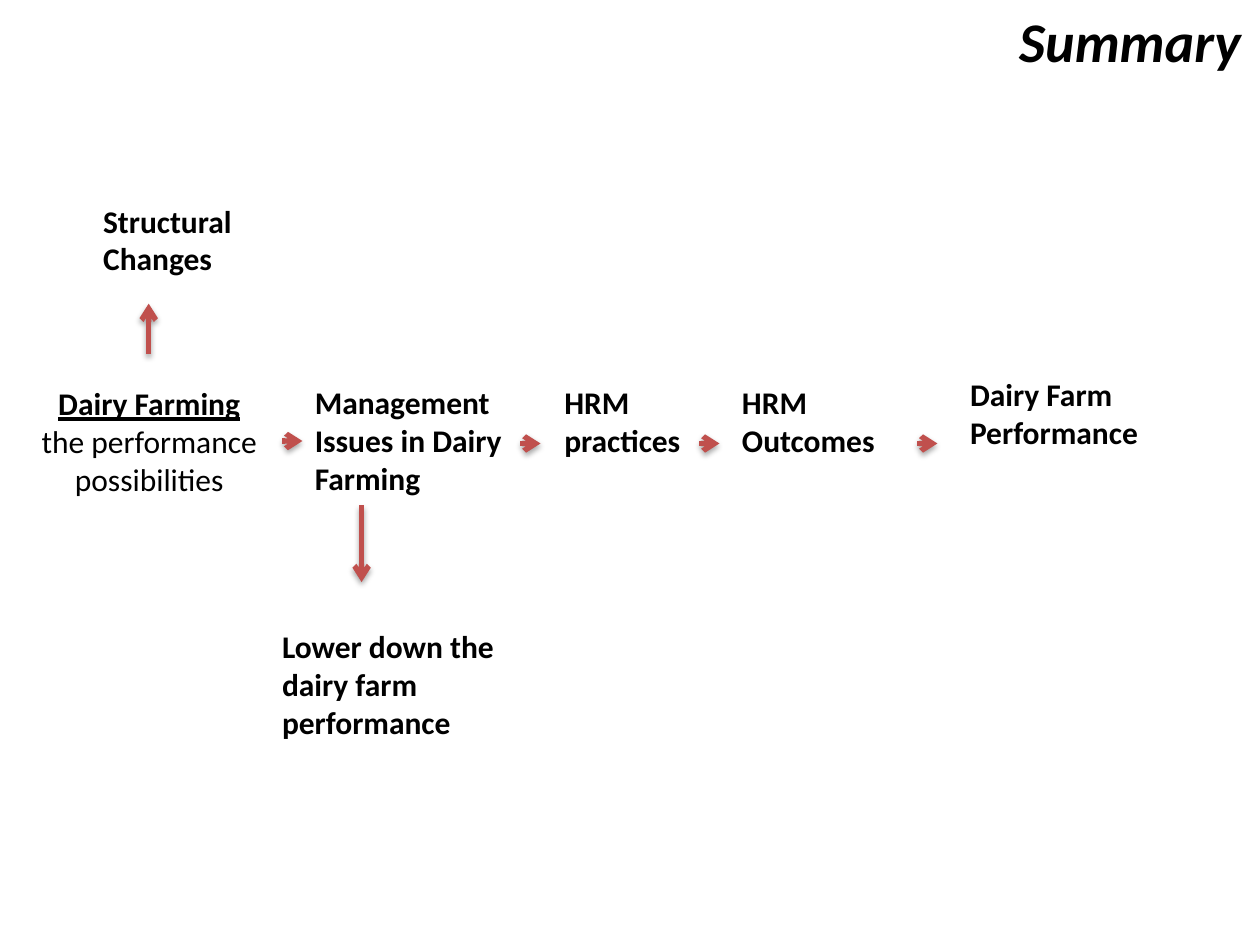
import pptx
import pptx.dml.color
import pptx.enum.shapes
import pptx.enum.text
import pptx.oxml
import pptx.oxml.ns
import pptx.util
from dataclasses import dataclass

ALIGN = pptx.enum.text.PP_ALIGN
COLS, ROWS = 100, 75  # grid of square cells over the slide


@dataclass(frozen=True)
class Theme:
    font: str = "Calibri"
    ink: str = "000000"
    accent: str = "C0504D"
    body: int = 18
    title: int = 32
    line: int = 3


THEME = Theme()


def cell(count):
    """Length of a number of grid cells."""
    return pptx.util.Inches(count * 10 / COLS)


def color(code):
    return pptx.dml.color.RGBColor.from_string(code)


def add_text(slide, box, lines, size=THEME.body, align=ALIGN.LEFT):
    """Add a wrapped text box with one paragraph per line; return its fonts."""
    frame = slide.shapes.add_textbox(*map(cell, box)).text_frame
    frame.word_wrap = True
    frame.auto_size = pptx.enum.text.MSO_AUTO_SIZE.SHAPE_TO_FIT_TEXT
    frame.text = "\n".join(lines)
    for para in frame.paragraphs:
        para.alignment = align
        font = para.font
        font.name, font.size, font.bold = THEME.font, pptx.util.Pt(size), True
        font.color.rgb = color(THEME.ink)
    return [para.font for para in frame.paragraphs]


def add_arrow(slide, start, end):
    """Add a straight arrow with a soft shadow below it."""
    kind = pptx.enum.shapes.MSO_CONNECTOR.STRAIGHT
    arrow = slide.shapes.add_connector(kind, *map(cell, start + end))
    arrow.line.color.rgb = color(THEME.accent)
    arrow.line.width = pptx.util.Pt(THEME.line)
    space = pptx.oxml.ns.nsdecls("a")
    arrow.line._get_or_add_ln().append(
        pptx.oxml.parse_xml(f'<a:tailEnd {space} type="arrow"/>'))
    arrow._element.spPr.append(pptx.oxml.parse_xml(
        f'<a:effectLst {space}><a:outerShdw blurRad="40000" dist="23000" '
        f'dir="5400000" rotWithShape="0"><a:srgbClr val="{THEME.ink}">'
        '<a:alpha val="35000"/></a:srgbClr></a:outerShdw></a:effectLst>'))


def main():
    deck = pptx.Presentation()
    deck.slide_width, deck.slide_height = cell(COLS), cell(ROWS)
    slide = deck.slides.add_slide(deck.slide_layouts[6])

    # Starting point: bold underlined heading over plain text
    head, note = add_text(
        slide, (1.2, 30, 21.3, 10.1),
        ["Dairy Farming", "the performance possibilities"],
        align=ALIGN.CENTER)
    head.underline = True
    note.bold = False

    # Steps of the chain and its two side branches
    steps = [
        ("HRM practices", (43.8, 29.9, 14.1, 7.1)),
        ("HRM Outcomes", (57.9, 29.9, 16.5, 7.1)),
        ("Dairy Farm Performance", (76, 29.3, 21.8, 7.1)),
        ("Structural Changes", (7.2, 15.5, 18.1, 7.1)),
        ("Management Issues in Dairy Farming", (24, 29.9, 18.4, 10.1)),
        ("Lower down the dairy farm performance", (21.4, 49.3, 21, 10.1)),
    ]
    for words, box in steps:
        add_text(slide, box, [words])

    # Short arrows along the chain
    for left, row in [(22.4, 35), (41.3, 35.2), (55.5, 35.2), (72.8, 35.2)]:
        add_arrow(slide, (left, row), (left + 1.6, row))

    # Arrows up and down to the branches
    for col, top, tip in [(11.8, 28.1, 24.1), (28.7, 40.1, 46.2)]:
        add_arrow(slide, (col, top), (col, tip))

    # Title
    title, = add_text(slide, (79.9, 0, 20.1, 6.4), ["Summary"], THEME.title)
    title.italic = True

    deck.save("out.pptx")


if __name__ == "__main__":
    main()
